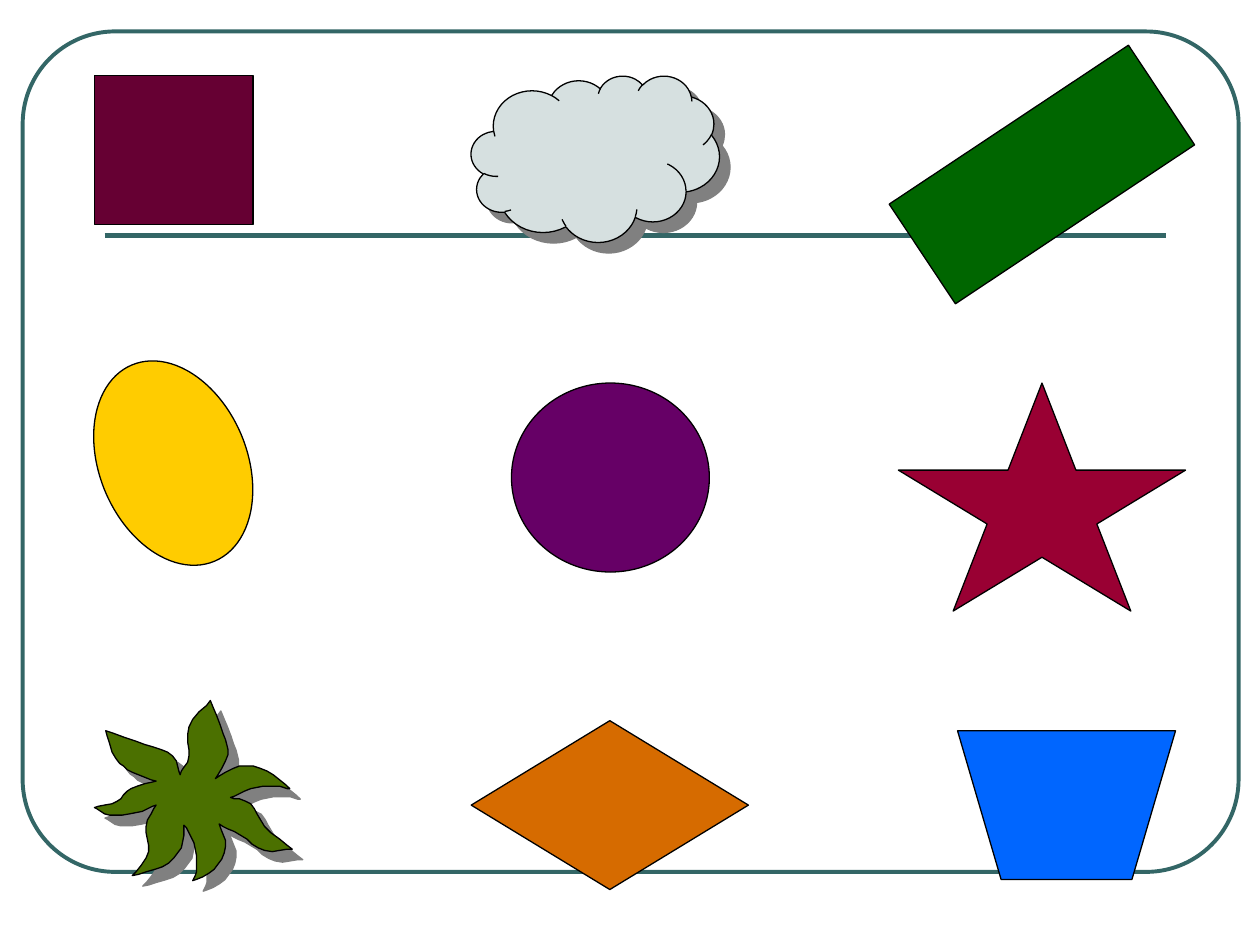
from dataclasses import dataclass

from lxml import etree
from pptx import Presentation
from pptx import util as u
from pptx.dml.color import RGBColor
from pptx.enum import shapes
from pptx.oxml import ns

PX = 9144  # EMU per px, 100 px to the inch
STEPS = 4  # straight pieces per curved stretch of the leaf
KIND = shapes.MSO_SHAPE
Point = tuple[float, float]


@dataclass(frozen=True)
class Theme:
    teal: str = "336666"
    ink: str = "000000"
    shade: str = "808080"
    leaf: str = "4B7000"
    thin: float = 0.75
    frame: float = 2.25
    rule: float = 3


@dataclass(frozen=True)
class Tile:
    kind: shapes.MSO_SHAPE
    left: int
    top: int
    width: int
    height: int
    fill: str
    turn: float = 0
    shadow: bool = False


THEME = Theme()
TILES = [
    Tile(KIND.RECTANGLE, 75, 60, 126, 118, "660033"),
    Tile(KIND.OVAL, 79, 283, 117, 169, "FFCC00", turn=337.1),
    Tile(KIND.RECTANGLE, 713, 91, 228, 95, "006600", turn=326.4),
    Tile(KIND.OVAL, 406, 304, 157, 150, "660066"),
    Tile(KIND.FLOWCHART_MANUAL_OPERATION, 760, 580, 173, 118, "0066FF"),
    Tile(KIND.CLOUD, 374, 60, 197, 132, "D6E0E0", shadow=True),
    Tile(KIND.FLOWCHART_DECISION, 417, 529, 134, 220, "D66B00", turn=270),
    Tile(KIND.STAR_5_POINT, 713, 304, 228, 181, "990033"),
]
# Each side of an arm: its sharp corner, then two points on the way to the next corner.
SIDES = [
    ((143, 615), (137, 600), (115, 591)),
    ((84, 580), (92, 602), (105, 613)),
    ((124, 620), (104, 626), (93, 636)),
    ((75, 641), (87, 647), (108, 645)),
    ((124, 639), (116, 656), (118, 676)),
    ((105, 695), (129, 688), (144, 673)),
    ((146, 655), (154, 669), (156, 689)),
    ((153, 699), (170, 690), (179, 672)),
    ((174, 654), (191, 663), (210, 675)),
    ((232, 674), (210, 656), (199, 638)),
    ((183, 633), (199, 626), (218, 624)),
    ((230, 626), (212, 612), (190, 608)),
    ((171, 618), (181, 599), (177, 582)),
    ((167, 556), (150, 577), (150, 600)),
]


def rgb(code: str) -> RGBColor:
    return RGBColor.from_string(code)


def stroke(shape, code: str, width: float) -> None:
    shape.line.color.rgb = rgb(code)
    shape.line.width = u.Pt(width)


def cast(shape) -> None:
    """Add a hard shadow towards the lower right."""
    effects = shape._element.spPr.find(ns.qn("a:effectLst"))
    outer = etree.SubElement(effects, ns.qn("a:outerShdw"), blurRad="0",
                             dist=str(u.Pt(8.5)), dir=str(45 * 60000),
                             algn="ctr", rotWithShape="0")
    etree.SubElement(outer, ns.qn("a:srgbClr"), val=THEME.shade)


def paint(shape, fill: str, shadow: bool) -> None:
    shape.fill.solid()
    shape.fill.fore_color.rgb = rgb(fill)
    stroke(shape, THEME.ink, THEME.thin)
    shape.shadow.inherit = False
    if shadow:
        cast(shape)


def place(slide, kind, left: int, top: int, width: int, height: int):
    return slide.shapes.add_shape(kind, left * PX, top * PX, width * PX, height * PX)


def draw_frame(slide) -> None:
    frame = place(slide, KIND.ROUNDED_RECTANGLE, 18, 25, 965, 667)
    frame.adjustments[0] = 0.11
    frame.fill.background()
    frame.shadow.inherit = False
    stroke(frame, THEME.teal, THEME.frame)
    rule = slide.shapes.add_connector(shapes.MSO_CONNECTOR.STRAIGHT,
                                      83 * PX, 187 * PX, 925 * PX, 187 * PX)
    stroke(rule, THEME.teal, THEME.rule)
    etree.SubElement(rule._element.spPr, ns.qn("a:effectLst"))


def draw_tile(slide, tile: Tile) -> None:
    shape = place(slide, tile.kind, tile.left, tile.top, tile.width, tile.height)
    shape.rotation = tile.turn
    paint(shape, tile.fill, tile.shadow)


def blend(a: float, b: float, c: float, d: float, t: float) -> float:
    """Catmull-Rom value between b and c."""
    return b + t / 2 * (c - a + t * (2 * a - 5 * b + 4 * c - d
                                     + t * (3 * (b - c) + d - a)))


def smooth(side: tuple[Point, ...], end: Point) -> list[Point]:
    """Points of a curve through one side, without its end."""
    knots = [side[0], *side, end, end]
    return [
        tuple(blend(*axis, step / STEPS) for axis in zip(*knots[i:i + 4]))
        for i in range(len(side))
        for step in range(STEPS)
    ]


def draw_leaf(slide) -> None:
    ends = [side[0] for side in SIDES[1:] + SIDES[:1]]
    points = [p for side, end in zip(SIDES, ends) for p in smooth(side, end)]
    pen = slide.shapes.build_freeform(*points[0], scale=PX)
    pen.add_line_segments(points[1:], close=True)
    paint(pen.convert_to_shape(), THEME.leaf, shadow=True)


def main() -> None:
    deck = Presentation()
    deck.slide_width, deck.slide_height = 1000 * PX, 750 * PX
    slide = deck.slides.add_slide(deck.slide_layouts[6])
    draw_frame(slide)
    for tile in TILES:
        draw_tile(slide, tile)
    draw_leaf(slide)
    deck.save("out.pptx")


if __name__ == "__main__":
    main()
